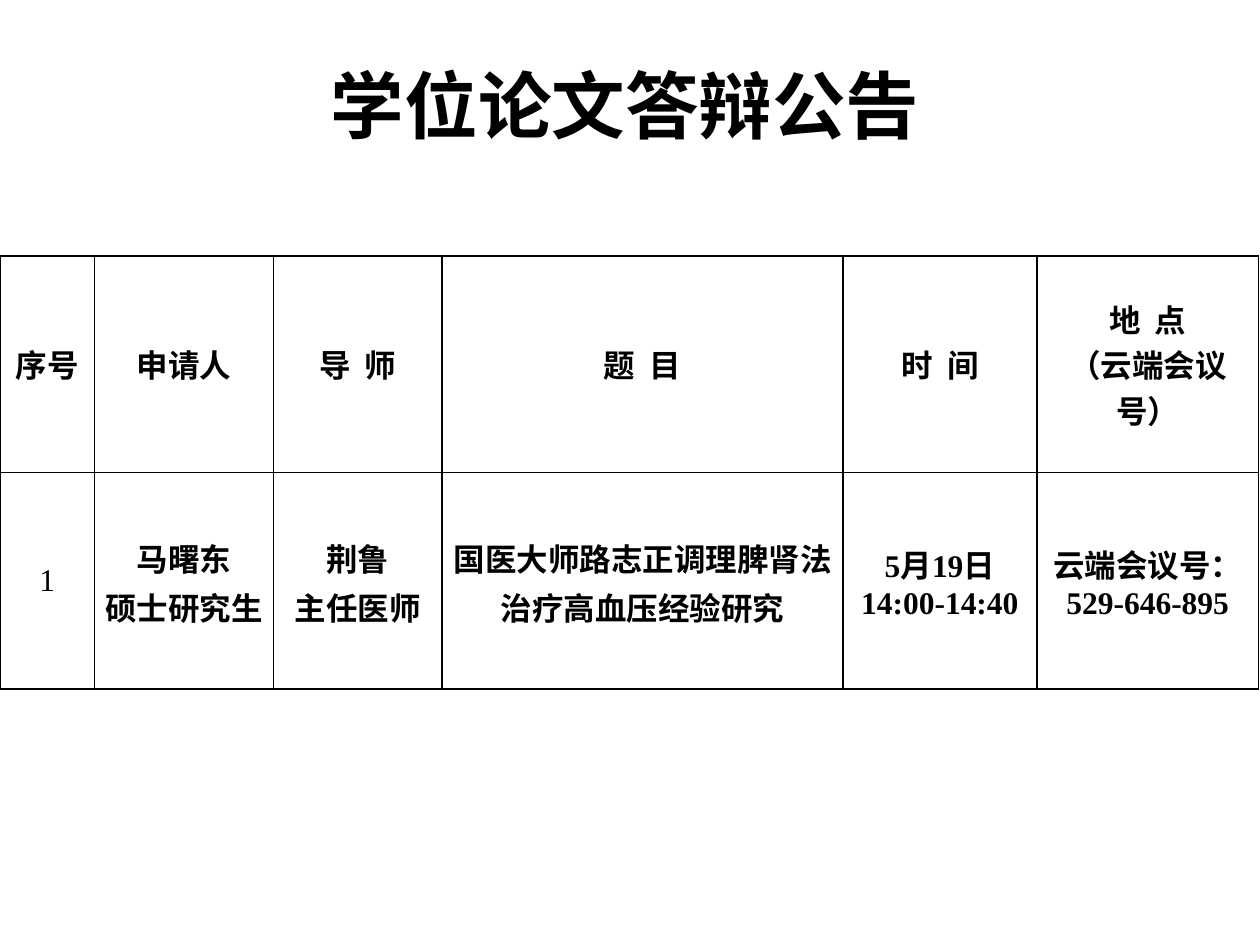
from dataclasses import dataclass

from lxml.etree import SubElement
from pptx import Presentation
from pptx.dml.color import RGBColor
from pptx.enum.text import MSO_ANCHOR, PP_ALIGN
from pptx.oxml.ns import qn
from pptx.slide import Slide
from pptx.table import _Cell
from pptx.text.text import TextFrame
from pptx.util import Inches, Pt

COLORS = {"ink": "000000", "paper": "FFFFFF"}
FONT = "Times New Roman"
COLUMN_WIDTHS = (0.75, 1.42, 1.34, 3.18, 1.54, 1.76)
ROW_HEIGHT = 1.72


@dataclass
class CellText:
    """Text and layout of one table cell."""

    lines: tuple[str, ...]
    bold: bool = True
    line_spacing: float | None = None
    narrow: bool = False


HEADER = [
    CellText(("序号",)),
    CellText(("申请人",)),
    CellText(("导  师",)),
    CellText(("题  目",)),
    CellText(("时  间",)),
    CellText(("地  点", "（云端会议号）")),
]
DEFENCE = [
    CellText(("1",), bold=False),
    CellText(("马曙东", "硕士研究生"), line_spacing=28, narrow=True),
    CellText(("荆鲁", "主任医师"), line_spacing=28, narrow=True),
    CellText(("国医大师路志正调理脾肾法治疗高血压经验研究",), line_spacing=28, narrow=True),
    CellText(("5月19日", "14:00-14:40"), narrow=True),
    CellText(("云端会议号：529-646-895",), narrow=True),
]


def write_lines(frame: TextFrame, text: CellText, size: float) -> None:
    """Fill a text frame with centred paragraphs."""
    frame.word_wrap = True
    for index, line in enumerate(text.lines):
        paragraph = frame.add_paragraph() if index else frame.paragraphs[0]
        paragraph.text = line
        paragraph.alignment = PP_ALIGN.CENTER
        if text.line_spacing:
            paragraph.line_spacing = Pt(text.line_spacing)
        paragraph.font.name = FONT
        paragraph.font.size = Pt(size)
        paragraph.font.bold = text.bold
        paragraph.font.color.rgb = RGBColor.from_string(COLORS["ink"])


def add_borders(cell: _Cell) -> None:
    """Draw a thin line on all four sides of a cell."""
    properties = cell._tc.get_or_add_tcPr()
    for side in ("lnL", "lnR", "lnT", "lnB"):
        line = SubElement(properties, qn(f"a:{side}"), w=str(Pt(1)))
        fill = SubElement(line, qn("a:solidFill"))
        SubElement(fill, qn("a:srgbClr"), val=COLORS["ink"])


def draw_cell(cell: _Cell, text: CellText) -> None:
    """Write and style one table cell."""
    write_lines(cell.text_frame, text, 18)
    cell.vertical_anchor = MSO_ANCHOR.MIDDLE
    if text.narrow:
        cell.margin_left = cell.margin_right = Inches(0.07)
        cell.margin_top = cell.margin_bottom = Inches(0)
    add_borders(cell)
    cell.fill.solid()
    cell.fill.fore_color.rgb = RGBColor.from_string(COLORS["paper"])


def draw_title(slide: Slide) -> None:
    """Add the announcement title."""
    title = slide.shapes.add_textbox(Inches(2.17), Inches(0.37), Inches(5.58), Inches(1.2))
    frame = title.text_frame
    write_lines(frame, CellText(("学位论文答辩公告",)), 42)
    frame.vertical_anchor = MSO_ANCHOR.MIDDLE
    frame.margin_bottom = Inches(0.34)


def draw_schedule(slide: Slide, rows: list[list[CellText]]) -> None:
    """Add the defence schedule table."""
    table = slide.shapes.add_table(
        len(rows), len(COLUMN_WIDTHS), Inches(0), Inches(2.03),
        Inches(sum(COLUMN_WIDTHS)), Inches(ROW_HEIGHT * len(rows)),
    ).table
    for column, width in zip(table.columns, COLUMN_WIDTHS):
        column.width = Inches(width)
    for row, texts in zip(table.rows, rows):
        row.height = Inches(ROW_HEIGHT)
        for cell, text in zip(row.cells, texts):
            draw_cell(cell, text)


def main() -> None:
    """Build and save the announcement slide."""
    presentation = Presentation()
    presentation.slide_width = Inches(10)
    presentation.slide_height = Inches(7.5)
    slide = presentation.slides.add_slide(presentation.slide_layouts[6])
    draw_title(slide)
    draw_schedule(slide, [HEADER, DEFENCE])
    presentation.save("out.pptx")


if __name__ == "__main__":
    main()
